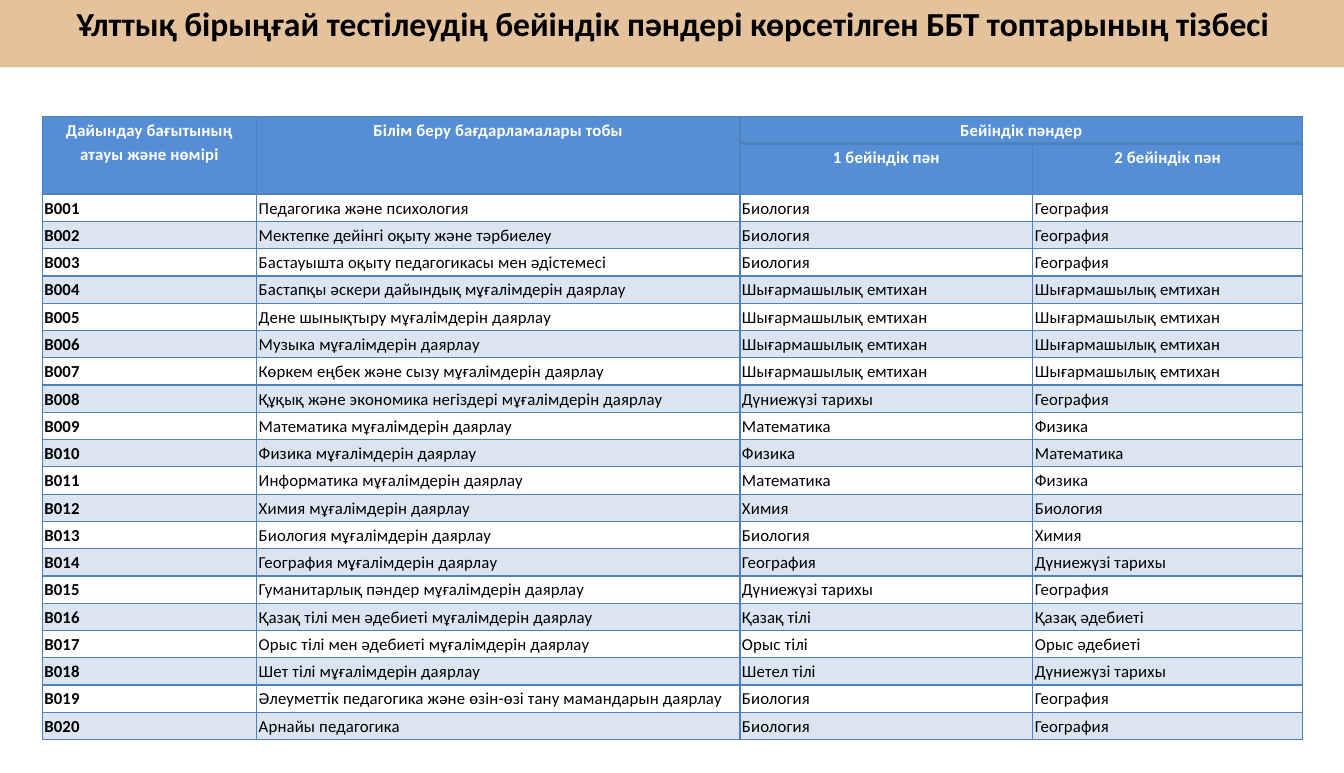
from lxml import etree
from pptx import Presentation, oxml
from pptx.dml.color import RGBColor
from pptx.enum import text
from pptx.oxml import ns
from pptx.util import Pt

WHITE = RGBColor(0xFF, 0xFF, 0xFF)
BLACK = RGBColor(0, 0, 0)
SAND = RGBColor(0xE4, 0xC2, 0x9C)
HEAD = RGBColor(0x55, 0x8E, 0xD5)
BLUE = RGBColor(0x4F, 0x81, 0xBD)
CENTER, LEFT = text.PP_ALIGN.CENTER, text.PP_ALIGN.LEFT

TITLE = "Ұлттық бірыңғай тестілеудің бейіндік пәндері көрсетілген ББТ топтарының тізбесі"
TOP = [
    ["Дайындау бағытының атауы және нөмірі", "Білім беру бағдарламалары тобы", "Бейіндік пәндер", ""],
    ["", "", "1 бейіндік пән", "2 бейіндік пән"],
]
SPANS = [((0, 0), (1, 0)), ((0, 1), (1, 1)), ((0, 2), (0, 3))]
BIO, GEO, MATH, PHYS, CHEM = "Биология", "География", "Математика", "Физика", "Химия"
EXAM, HIST = "Шығармашылық емтихан", "Дүниежүзі тарихы"
TRAIN = " мұғалімдерін даярлау"
GROUPS = [
    ("Педагогика және психология", BIO, GEO),
    ("Мектепке дейінгі оқыту және тәрбиелеу", BIO, GEO),
    ("Бастауышта оқыту педагогикасы мен әдістемесі", BIO, GEO),
    ("Бастапқы әскери дайындық" + TRAIN, EXAM, EXAM),
    ("Дене шынықтыру" + TRAIN, EXAM, EXAM),
    ("Музыка" + TRAIN, EXAM, EXAM),
    ("Көркем еңбек және сызу" + TRAIN, EXAM, EXAM),
    ("Құқық және экономика негіздері" + TRAIN, HIST, GEO),
    (MATH + TRAIN, MATH, PHYS),
    (PHYS + TRAIN, PHYS, MATH),
    ("Информатика" + TRAIN, MATH, PHYS),
    (CHEM + TRAIN, CHEM, BIO),
    (BIO + TRAIN, BIO, CHEM),
    (GEO + TRAIN, GEO, HIST),
    ("Гуманитарлық пәндер" + TRAIN, HIST, GEO),
    ("Қазақ тілі мен әдебиеті" + TRAIN, "Қазақ тілі", "Қазақ әдебиеті"),
    ("Орыс тілі мен әдебиеті" + TRAIN, "Орыс тілі", "Орыс әдебиеті"),
    ("Шет тілі" + TRAIN, "Шетел тілі", HIST),
    ("Әлеуметтік педагогика және өзін-өзі тану мамандарын даярлау", BIO, GEO),
    ("Арнайы педагогика", BIO, GEO),
]
ROWS = TOP + [[f"В{n:03}", *group] for n, group in enumerate(GROUPS, 1)]
WIDTHS = [153.4, 345.6, 209.5, 193]
HEIGHTS = [19.3, 36.2] + [19.53] * len(GROUPS)


class Deck:
    """Holds the font and the current slide, and adds elements to it."""

    def __init__(self, deck, font="Calibri"):
        self.font = font
        self.slide = deck.slides.add_slide(deck.slide_layouts[5])

    def put(self, para, words, size, color, bold, align):
        para.alignment = align
        run = para.add_run()
        run.text = words
        font = run.font
        font.name, font.size, font.bold = self.font, Pt(size), bold
        font.color.rgb = color
        return run

    def title(self, words, left, top, width, height):
        shape = self.slide.shapes.title
        shape.left, shape.top = Pt(left), Pt(top)
        shape.width, shape.height = Pt(width), Pt(height)
        shape.fill.solid()
        shape.fill.fore_color.rgb = SAND
        frame = shape.text_frame
        frame.word_wrap = True
        frame.auto_size = text.MSO_AUTO_SIZE.NONE
        frame.vertical_anchor = text.MSO_ANCHOR.TOP
        self.put(frame.paragraphs[0], words, 24, BLACK, True, CENTER)

    def border(self, cell, base):
        props = cell._tc.get_or_add_tcPr()
        for side, width in zip("LRTB", (1, 1, 1, base)):
            props.append(oxml.parse_xml(
                f'<a:ln{side} {ns.nsdecls("a")} w="{Pt(width)}"><a:solidFill>'
                f'<a:srgbClr val="{BLUE}"/></a:solidFill></a:ln{side}>'))

    def paint(self, cell, color, alpha=100):
        cell.fill.solid()
        cell.fill.fore_color.rgb = color
        if alpha < 100:
            tone = cell._tc.tcPr.find(ns.qn("a:solidFill"))[0]
            etree.SubElement(tone, ns.qn("a:alpha"), val=str(alpha * 1000))

    def cell(self, cell, words, row, col):
        head = row < len(TOP)
        cell.margin_left = cell.margin_right = Pt(1.5)
        cell.margin_top = cell.margin_bottom = Pt(0.7)
        self.border(cell, 2 if row == 0 else 1)
        if head:
            self.paint(cell, HEAD)
        elif row % 2:
            self.paint(cell, BLUE, 20)
        else:
            cell.fill.background()
        if words:
            para = cell.text_frame.paragraphs[0]
            para.line_spacing = 1.15
            run = self.put(para, words, 12, WHITE if head else BLACK,
                           head or col == 0, CENTER if head else LEFT)
            run._r.get_or_add_rPr().set("spc", "10")

    def table(self, rows, left, top, widths, heights, spans):
        frame = self.slide.shapes.add_table(
            len(rows), len(widths), Pt(left), Pt(top), Pt(sum(widths)), Pt(sum(heights)))
        grid = frame.table
        grid.first_row = grid.horz_banding = False
        for col, width in zip(grid.columns, widths):
            col.width = Pt(width)
        for line, height in zip(grid.rows, heights):
            line.height = Pt(height)
        for start, end in spans:
            grid.cell(*start).merge(grid.cell(*end))
        for row, line in enumerate(rows):
            for col, words in enumerate(line):
                self.cell(grid.cell(row, col), words, row, col)


deck = Presentation()
deck.slide_width, deck.slide_height = Pt(961.2), Pt(553)
page = Deck(deck)
page.title(TITLE, 0, -1.5, 962.6, 49.7)
page.table(ROWS, 30.2, 83.5, WIDTHS, HEIGHTS, SPANS)
deck.save("out.pptx")
